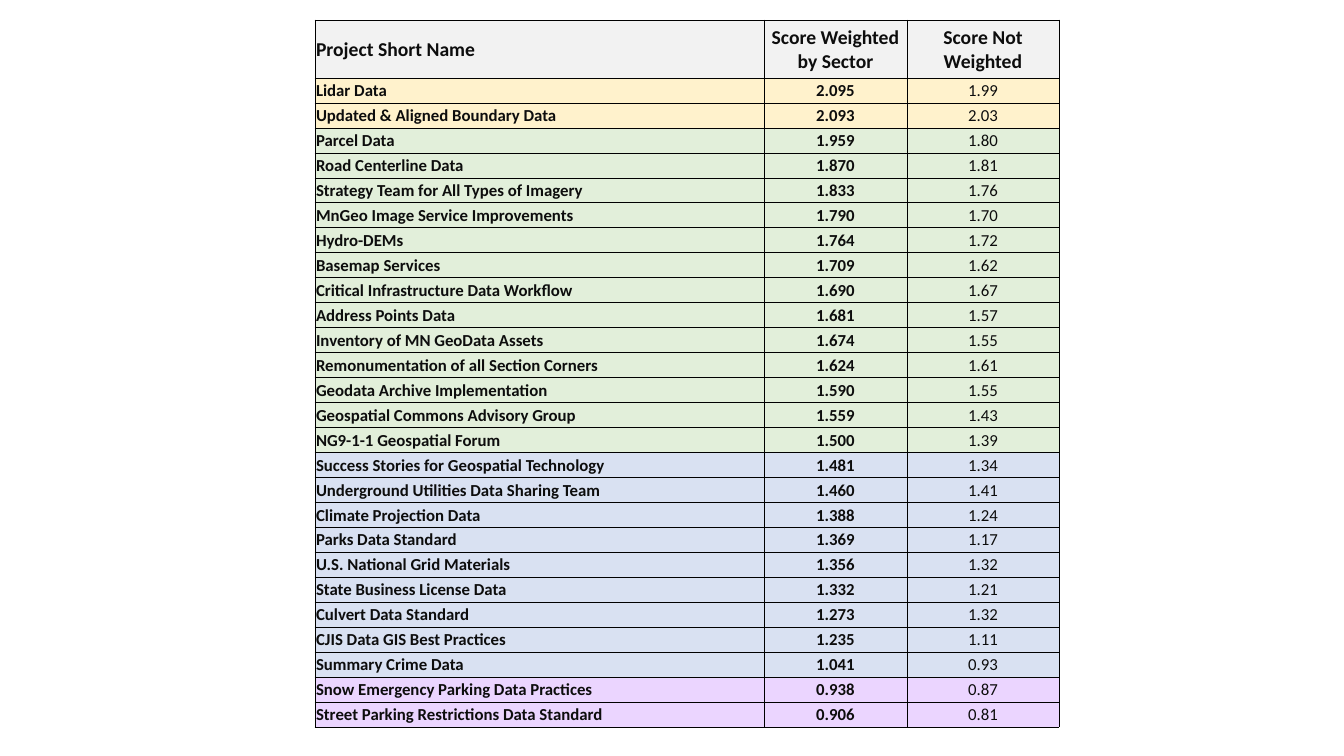
"""Build a slide with a table of project scores, banded by priority."""
from lxml.etree import SubElement
from pptx import Presentation
from pptx.dml.color import RGBColor
from pptx.enum.text import MSO_ANCHOR, PP_ALIGN
from pptx.oxml.ns import qn
from pptx.util import Pt

PX = 914400 / 100.8
COLUMN_WIDTHS = [449, 143, 152]
HEADER_HEIGHT, ROW_HEIGHT = 58, 25
HEADINGS = ["Project Short Name", "Score Weighted by Sector", "Score Not Weighted"]
BANDS = [
    ("FFF2CC", [
        ("Lidar Data", "2.095", "1.99"),
        ("Updated & Aligned Boundary Data", "2.093", "2.03"),
    ]),
    ("E2EFDA", [
        ("Parcel Data", "1.959", "1.80"),
        ("Road Centerline Data", "1.870", "1.81"),
        ("Strategy Team for All Types of Imagery", "1.833", "1.76"),
        ("MnGeo Image Service Improvements", "1.790", "1.70"),
        ("Hydro-DEMs", "1.764", "1.72"),
        ("Basemap Services", "1.709", "1.62"),
        ("Critical Infrastructure Data Workflow", "1.690", "1.67"),
        ("Address Points Data", "1.681", "1.57"),
        ("Inventory of MN GeoData Assets", "1.674", "1.55"),
        ("Remonumentation of all Section Corners", "1.624", "1.61"),
        ("Geodata Archive Implementation", "1.590", "1.55"),
        ("Geospatial Commons Advisory Group", "1.559", "1.43"),
        ("NG9-1-1 Geospatial Forum", "1.500", "1.39"),
    ]),
    ("D9E1F2", [
        ("Success Stories for Geospatial Technology", "1.481", "1.34"),
        ("Underground Utilities Data Sharing Team", "1.460", "1.41"),
        ("Climate Projection Data", "1.388", "1.24"),
        ("Parks Data Standard", "1.369", "1.17"),
        ("U.S. National Grid Materials", "1.356", "1.32"),
        ("State Business License Data", "1.332", "1.21"),
        ("Culvert Data Standard", "1.273", "1.32"),
        ("CJIS Data GIS Best Practices", "1.235", "1.11"),
        ("Summary Crime Data", "1.041", "0.93"),
    ]),
    ("EBD5FF", [
        ("Snow Emergency Parking Data Practices", "0.938", "0.87"),
        ("Street Parking Restrictions Data Standard", "0.906", "0.81"),
    ]),
]


def px(length):
    return round(length * PX)


def write_cell(cell, text, *, fill, size=12, bold=True, align=PP_ALIGN.CENTER):
    cell.margin_left = cell.margin_right = cell.margin_top = px(1)
    cell.margin_bottom = 0
    cell.vertical_anchor = MSO_ANCHOR.MIDDLE
    properties = cell._tc.get_or_add_tcPr()
    for side in ("a:lnL", "a:lnR", "a:lnT", "a:lnB"):
        border = SubElement(properties, qn(side), w=str(Pt(0.5)))
        SubElement(SubElement(border, qn("a:solidFill")), qn("a:srgbClr"), val="000000")
    cell.fill.solid()
    cell.fill.fore_color.rgb = RGBColor.from_string(fill)
    paragraph = cell.text_frame.paragraphs[0]
    paragraph.alignment = align
    run = paragraph.add_run()
    run.text = text
    run.font.name = "Calibri"
    run.font.size = Pt(size)
    run.font.bold = bold
    run.font.color.rgb = RGBColor.from_string("0D0D0D")


presentation = Presentation()
presentation.slide_width, presentation.slide_height = px(1344), px(756)
slide = presentation.slides.add_slide(presentation.slide_layouts[6])

rows = [("F2F2F2", HEADINGS)]
for band_fill, projects in BANDS:
    rows += [(band_fill, project) for project in projects]

table_height = HEADER_HEIGHT + ROW_HEIGHT * (len(rows) - 1)
table = slide.shapes.add_table(
    len(rows), len(COLUMN_WIDTHS), px(315), px(20), px(sum(COLUMN_WIDTHS)), px(table_height)
).table
table.first_row = table.horz_banding = False
for column, width in zip(table.columns, COLUMN_WIDTHS):
    column.width = px(width)

for row_index, (row_fill, texts) in enumerate(rows):
    is_header = row_index == 0
    table.rows[row_index].height = px(HEADER_HEIGHT if is_header else ROW_HEIGHT)
    for column_index, text in enumerate(texts):
        write_cell(
            table.cell(row_index, column_index),
            text,
            fill=row_fill,
            size=14 if is_header else 12,
            bold=is_header or column_index < 2,
            align=PP_ALIGN.LEFT if column_index == 0 else PP_ALIGN.CENTER,
        )

presentation.save("out.pptx")
